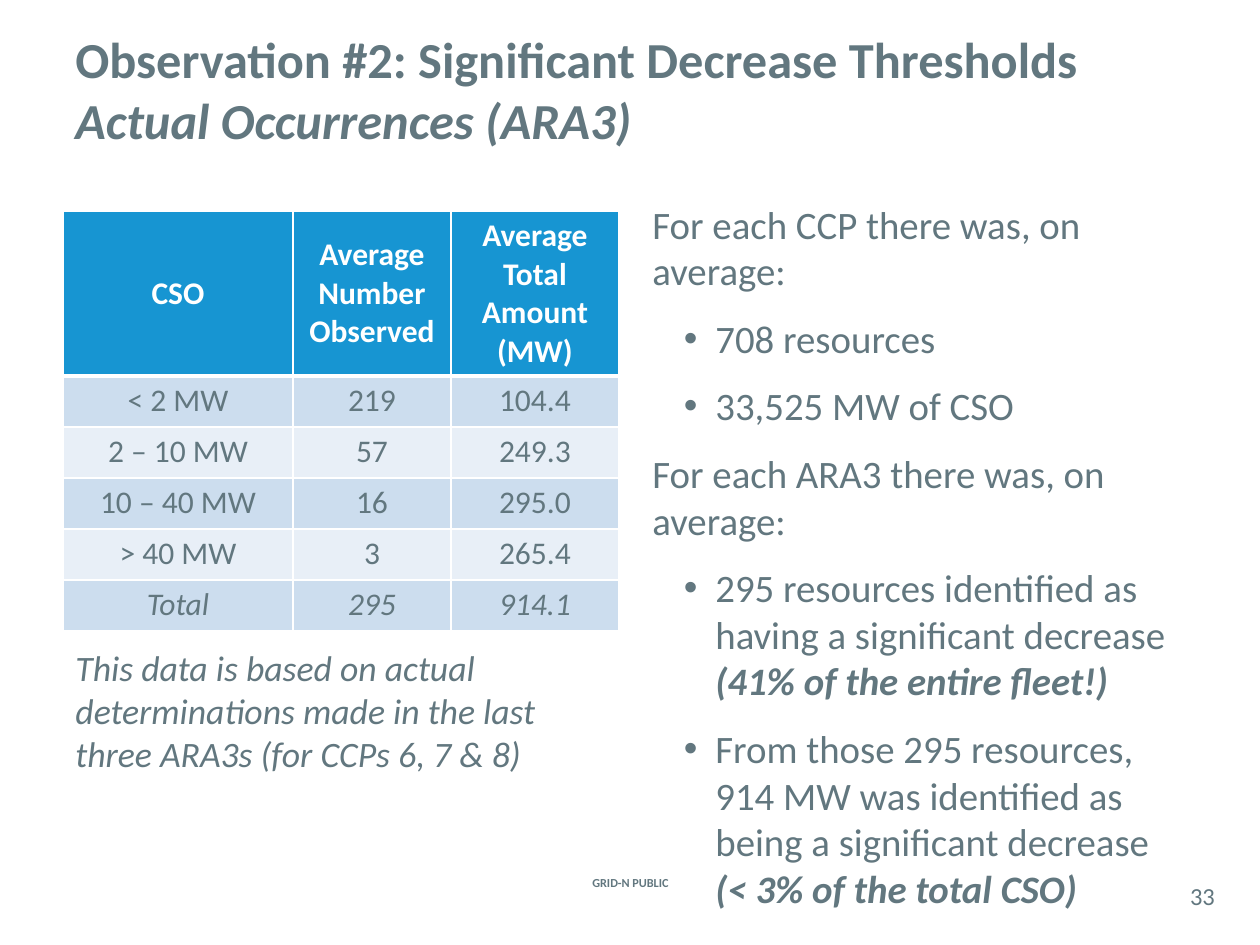
from lxml import etree
from pptx import Presentation
from pptx import util as u
from pptx.dml.color import RGBColor
from pptx.enum import text
from pptx.oxml import ns

SCALE = 914400 / 126
SLATE, WHITE, BLUE = "62777F", "FFFFFF", "1795D2"
BANDS = ["CCDDEE", "E8EFF7"]
CENTER, MIDDLE = text.PP_ALIGN.CENTER, text.MSO_ANCHOR.MIDDLE


def px(*values):
    return [u.Emu(round(v * SCALE)) for v in values]


def write(p, lines, color=SLATE, **fmt):
    """Write (words, extra format) lines into one paragraph."""
    for i, (words, extra) in enumerate(lines):
        if i:
            p.add_line_break()
        r = p.add_run()
        r.text = words
        r.font.color.rgb = RGBColor.from_string(color)
        for name, value in {"name": "Calibri", **fmt, **extra}.items():
            setattr(r.font, name, value)


prs = Presentation()
prs.slide_width, prs.slide_height = px(1260, 945)
s = prs.slides.add_slide(prs.slide_layouts[6])

# Title, note, footer and page number
boxes = [
    ((63, 10, 1134, 158), [("Observation #2: Significant Decrease Thresholds", {}),
                           ("Actual Occurrences (ARA3)", {"italic": True})],
     {"size": u.Pt(28.8), "bold": True}, {"vertical_anchor": MIDDLE}, None),
    ((63, 640, 525, 121), [("This data is based on actual determinations made in the last "
                            "three ARA3s (for CCPs 6, 7 & 8)", {})],
     {"size": u.Pt(20.4), "italic": True}, {}, None),
    ((538, 872, 185, 21), [("GRID-N PUBLIC", {})],
     {"size": u.Pt(7), "bold": True}, {"vertical_anchor": MIDDLE}, CENTER),
    ((1176, 877, 53, 37), [("33", {})], {"size": u.Pt(14)},
     {"vertical_anchor": MIDDLE, "margin_left": 0, "margin_right": 0,
      "margin_top": 0, "margin_bottom": 0}, CENTER),
]
for place, lines, fmt, frame, align in boxes:
    tf = s.shapes.add_textbox(*px(*place)).text_frame
    for name, value in {"word_wrap": True, **frame}.items():
        setattr(tf, name, value)
    tf.paragraphs[0].alignment = align
    write(tf.paragraphs[0], lines, **fmt)

# Table of occurrences
rows = [
    ["CSO", "Average Number Observed", "Average Total Amount\n(MW)"],
    ["< 2 MW", "219", "104.4"],
    ["2 – 10 MW", "57", "249.3"],
    ["10 – 40 MW", "16", "295.0"],
    ["> 40 MW", "3", "265.4"],
    ["Total", "295", "914.1"],
]
widths, heights = [230, 158, 168], [165] + [51] * 5
table = s.shapes.add_table(len(rows), len(widths),
                           *px(63, 211, sum(widths), sum(heights))).table
table.first_row = table.horz_banding = False
for col, width in zip(table.columns, px(*widths)):
    col.width = width
for row, height in zip(table.rows, px(*heights)):
    row.height = height
for i, values in enumerate(rows):
    header, total = i == 0, i == len(rows) - 1
    for j, value in enumerate(values):
        cell = table.cell(i, j)
        cell.margin_left, cell.margin_right, cell.margin_top, cell.margin_bottom = px(5, 5, 6, 6)
        if header:
            cell.vertical_anchor = MIDDLE
        for side in "LRTB":
            thick = (i, side) in [(0, "B"), (1, "T")]
            ln = etree.SubElement(cell._tc.get_or_add_tcPr(), ns.qn("a:ln" + side),
                                  w=str(u.Pt(3 if thick else 1)))
            fill = etree.SubElement(ln, ns.qn("a:solidFill"))
            etree.SubElement(fill, ns.qn("a:srgbClr"), val=WHITE)
        cell.fill.solid()
        cell.fill.fore_color.rgb = RGBColor.from_string(BLUE if header else BANDS[(i - 1) % 2])
        p = cell.text_frame.paragraphs[0]
        p.alignment = CENTER
        write(p, [(line, {}) for line in value.split("\n")], WHITE if header else SLATE,
              size=u.Pt(18), bold=header, italic=total)

# Findings on the right
strong = {"bold": True, "italic": True}
findings = [
    (False, [("For each CCP there was, on average:", {})]),
    (True, [("708 resources", {})]),
    (True, [("33,525 MW of CSO", {})]),
    (False, [("For each ARA3 there was, on average:", {})]),
    (True, [("295 resources identified as having a significant decrease", {}),
            ("(41% of the entire fleet!)", strong)]),
    (True, [("From those 295 resources, 914 MW was identified as being a significant decrease", {}),
            ("(< 3% of the total CSO)", strong)]),
]
tf = s.shapes.add_textbox(*px(640, 194, 557, 656)).text_frame
tf.word_wrap = True
for i, (bullet, lines) in enumerate(findings):
    p = tf.add_paragraph() if i else tf.paragraphs[0]
    if i:
        p.space_before = u.Pt(12)
    if bullet:
        pPr = p._p.get_or_add_pPr()
        pPr.set("marL", str(u.Inches(0.5)))
        pPr.set("indent", str(u.Inches(-0.25)))
        etree.SubElement(pPr, ns.qn("a:buFont"), typeface="Arial")
        etree.SubElement(pPr, ns.qn("a:buChar"), char="•")
    write(p, lines, size=u.Pt(22.2))

prs.save("out.pptx")
